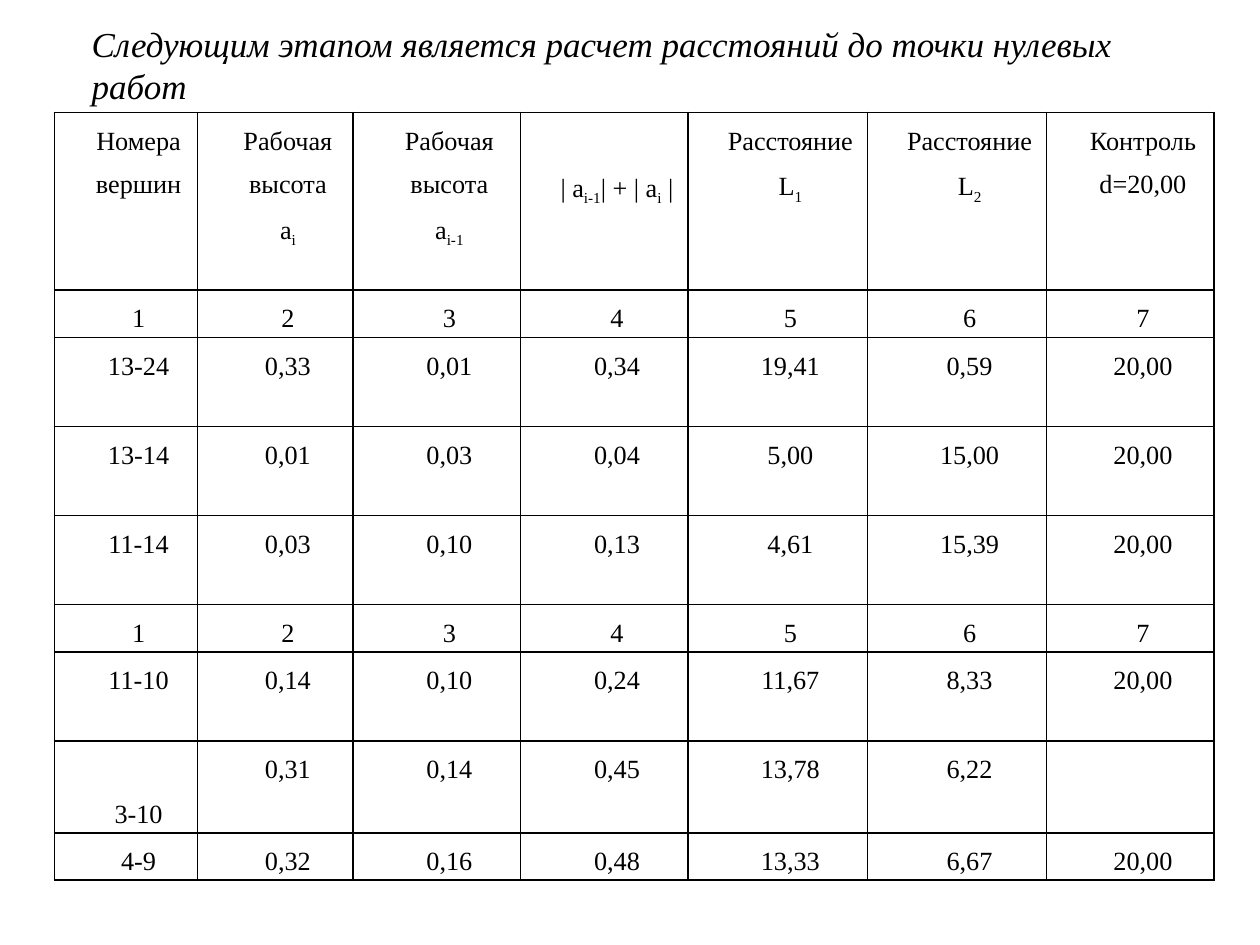
"""Build a slide with the table of distances to the zero work points."""
from lxml.etree import SubElement as Sub
from pptx import Presentation
from pptx.dml.color import RGBColor
from pptx.enum.text import PP_ALIGN as Align
from pptx.oxml.ns import qn
from pptx.util import Pt

TITLE = "Следующим этапом является расчет расстояний до точки нулевых работ"
HEAD = [
    "Номера\nвершин",
    "Рабочая\nвысота\nа_i",
    "Рабочая\nвысота\nа_i-1",
    "| а_і-1_| + | а_і_ |",
    "Расстояние\nL_1",
    "Расстояние\nL_2",
    "Контроль\nd=20,00",
]
COUNT = ["1", "2", "3", "4", "5", "6", "7"]
ROWS = [
    HEAD,
    COUNT,
    ["13-24", "0,33", "0,01", "0,34", "19,41", "0,59", "20,00"],
    ["13-14", "0,01", "0,03", "0,04", "5,00", "15,00", "20,00"],
    ["11-14", "0,03", "0,10", "0,13", "4,61", "15,39", "20,00"],
    COUNT,
    ["11-10", "0,14", "0,10", "0,24", "11,67", "8,33", "20,00"],
    ["3-10", "0,31", "0,14", "0,45", "13,78", "6,22", ""],
    ["4-9", "0,32", "0,16", "0,48", "13,33", "6,67", "20,00"],
]
WIDTHS = [82, 88.7, 95.8, 95.8, 102.4, 102.4, 95.8]
LOW, TALL = 26.7, 50.9
HEIGHTS = [101.6, LOW, TALL, TALL, TALL, LOW, TALL, 51.6, LOW]
DROPPED = {(0, 3), (7, 0)}
DROP = 25.6
FONT = "Times New Roman"
BLACK = RGBColor(0, 0, 0)


def style(para, size, indent):
    para._p.get_or_add_pPr().set("marL", str(Pt(indent)))
    para._p.get_or_add_pPr().set("indent", "0")
    font = para.font
    font.name, font.size = FONT, Pt(size)
    font.color.rgb = BLACK


def border(cell):
    props = cell._tc.get_or_add_tcPr()
    for side in ("lnL", "lnR", "lnT", "lnB"):
        line = Sub(props, qn("a:" + side), w=str(Pt(1)))
        Sub(Sub(line, qn("a:solidFill")), qn("a:srgbClr"), val=str(BLACK))


def write(cell, text, top):
    cell.margin_left = cell.margin_right = Pt(6.5)
    cell.margin_top, cell.margin_bottom = Pt(top), 0
    frame = cell.text_frame
    for i, line in enumerate(text.split("\n")):
        para = frame.add_paragraph() if i else frame.paragraphs[0]
        style(para, 15, 14.4)
        para.alignment, para.line_spacing = Align.CENTER, 1.5
        for j, part in enumerate(line.split("_") if line else []):
            run = para.add_run()
            run.text = part
            if j % 2:
                run._r.get_or_add_rPr().set("baseline", "-25000")
    border(cell)
    cell.fill.background()


def main():
    deck = Presentation()
    deck.slide_width, deck.slide_height = Pt(720), Pt(540)
    slide = deck.slides.add_slide(deck.slide_layouts[6])

    box = slide.shapes.add_textbox(Pt(36.7), Pt(9.4), Pt(648), Pt(51))
    box.text_frame.word_wrap = True
    para = box.text_frame.paragraphs[0]
    para.text = TITLE
    style(para, 20, 8.6)
    para.font.italic = True

    table = slide.shapes.add_table(
        len(ROWS), len(WIDTHS), Pt(31), Pt(64.2),
        Pt(sum(WIDTHS)), Pt(sum(HEIGHTS))).table
    table.first_row = table.horz_banding = False
    for col, width in zip(table.columns, WIDTHS):
        col.width = Pt(width)
    for r, (row, height) in enumerate(zip(ROWS, HEIGHTS)):
        table.rows[r].height = Pt(height)
        for c, text in enumerate(row):
            write(table.cell(r, c), text, DROP if (r, c) in DROPPED else 0)

    deck.save("out.pptx")


if __name__ == "__main__":
    main()
